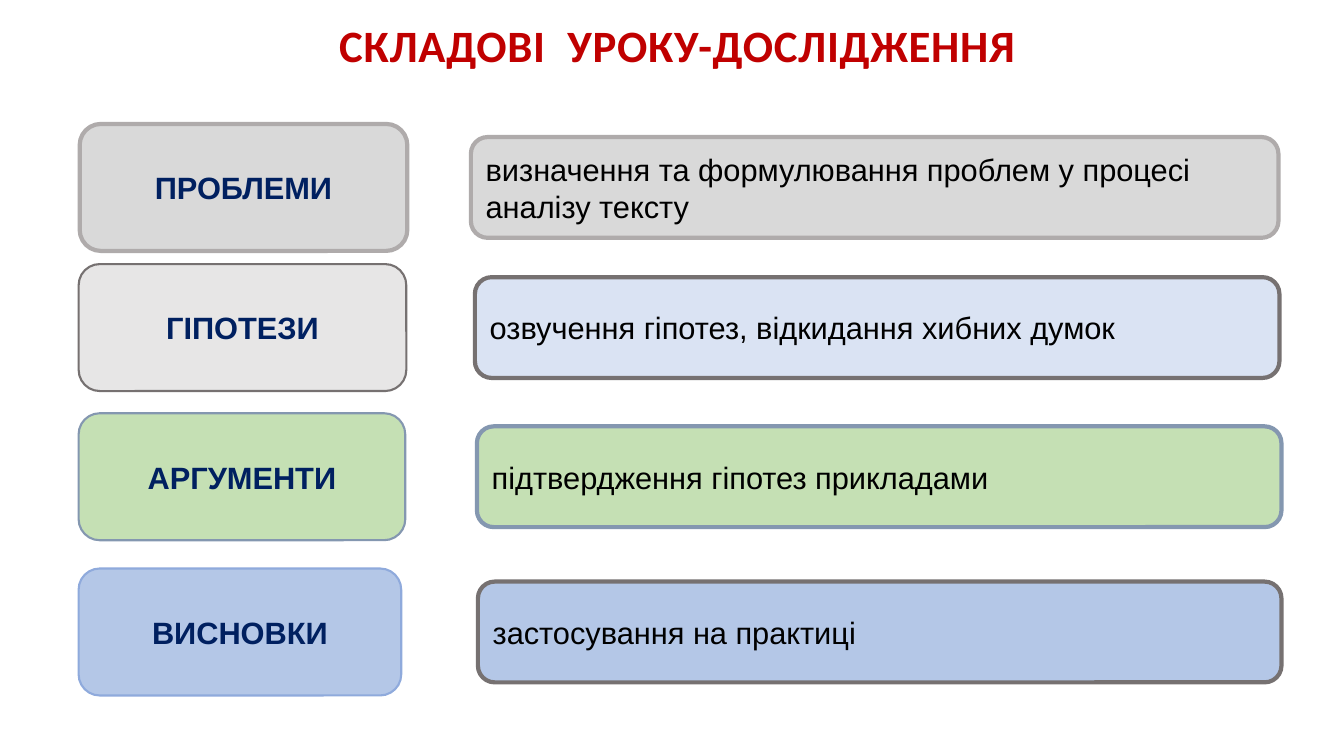
from dataclasses import dataclass

from pptx import Presentation
from pptx.dml.color import RGBColor
from pptx.enum.shapes import MSO_SHAPE
from pptx.enum.text import MSO_ANCHOR, MSO_AUTO_SIZE, PP_ALIGN
from pptx.util import Emu, Pt

EMU_PER_PX = 9144


@dataclass(frozen=True)
class Theme:
    heading_font: str = "Calibri"
    body_font: str = "Arial"
    heading_size: int = 32
    body_size: int = 22
    red: str = "C00000"
    navy: str = "002060"
    black: str = "000000"
    silver: str = "D9D9D9"
    pale_grey: str = "E7E6E6"
    mid_grey: str = "AFABAB"
    dark_grey: str = "767171"
    pale_blue: str = "DAE3F3"
    green: str = "C5E0B4"
    slate: str = "8497B0"
    blue: str = "B4C7E7"
    bright_blue: str = "8FAADC"


def px(length):
    return Emu(length * EMU_PER_PX)


def apply(target, values):
    for name, value in values.items():
        setattr(target, name, value)


class SlideBuilder:
    def __init__(self, slide, theme):
        self.slide = slide
        self.theme = theme

    def place(self, element, left, top, width, height):
        apply(element, {"left": px(left), "top": px(top),
                        "width": px(width), "height": px(height)})

    def wording(self, element, words, align, font, size, color, bold):
        apply(element.text_frame, {"word_wrap": True,
                                   "auto_size": MSO_AUTO_SIZE.NONE,
                                   "vertical_anchor": MSO_ANCHOR.MIDDLE})
        paragraph = element.text_frame.paragraphs[0]
        paragraph.alignment = align
        run = paragraph.add_run()
        run.text = words
        apply(run.font, {"name": font, "size": Pt(size), "bold": bold})
        run.font.color.rgb = RGBColor.from_string(color)
        return run

    def title(self, words, box):
        theme = self.theme
        heading = self.slide.shapes.title
        self.place(heading, *box)
        run = self.wording(heading, words, PP_ALIGN.CENTER, theme.heading_font,
                           theme.heading_size, theme.red, True)
        run.font._element.set("spc", "50")

    def card(self, words, box, fill, border, border_width, align, color, bold):
        card = self.slide.shapes.add_shape(
            MSO_SHAPE.ROUNDED_RECTANGLE, *map(px, box))
        card.shadow.inherit = False
        card.fill.solid()
        card.fill.fore_color.rgb = RGBColor.from_string(fill)
        card.line.color.rgb = RGBColor.from_string(border)
        card.line.width = Pt(border_width)
        self.wording(card, words, align, self.theme.body_font,
                     self.theme.body_size, color, bold)

    def stage(self, middle, label, detail):
        name, left, width, fill, border, border_width = label
        self.card(name, (left, middle - 63, width, 126), fill, border,
                  border_width, PP_ALIGN.CENTER, self.theme.navy, True)
        meaning, left, width, fill, border = detail
        self.card(meaning, (left, middle - 50, width, 100), fill, border,
                  3, PP_ALIGN.LEFT, self.theme.black, False)


def main():
    presentation = Presentation()
    apply(presentation, {"slide_width": px(1333), "slide_height": px(750)})
    theme = Theme()
    slide = presentation.slides.add_slide(presentation.slide_layouts[5])
    builder = SlideBuilder(slide, theme)
    builder.title("СКЛАДОВІ  УРОКУ-ДОСЛІДЖЕННЯ", (131, 12, 1082, 64))

    stages = [
        (186,
         ("ПРОБЛЕМИ", 79, 325, theme.silver, theme.mid_grey, 3),
         ("визначення та формулювання проблем у процесі аналізу тексту",
          467, 801, theme.silver, theme.mid_grey)),
        (325,
         ("ГІПОТЕЗИ", 78, 325, theme.pale_grey, theme.dark_grey, 1.5),
         ("озвучення гіпотез, відкидання хибних думок",
          471, 798, theme.pale_blue, theme.dark_grey)),
        (473,
         ("АРГУМЕНТИ", 78, 324, theme.green, theme.slate, 1.5),
         ("підтвердження гіпотез прикладами",
          473, 798, theme.green, theme.slate)),
        (627,
         ("ВИСНОВКИ", 78, 320, theme.blue, theme.bright_blue, 1.5),
         ("застосування на практиці",
          474, 797, theme.blue, theme.dark_grey)),
    ]
    for middle, label, detail in stages:
        builder.stage(middle, label, detail)

    presentation.save("out.pptx")


if __name__ == "__main__":
    main()
